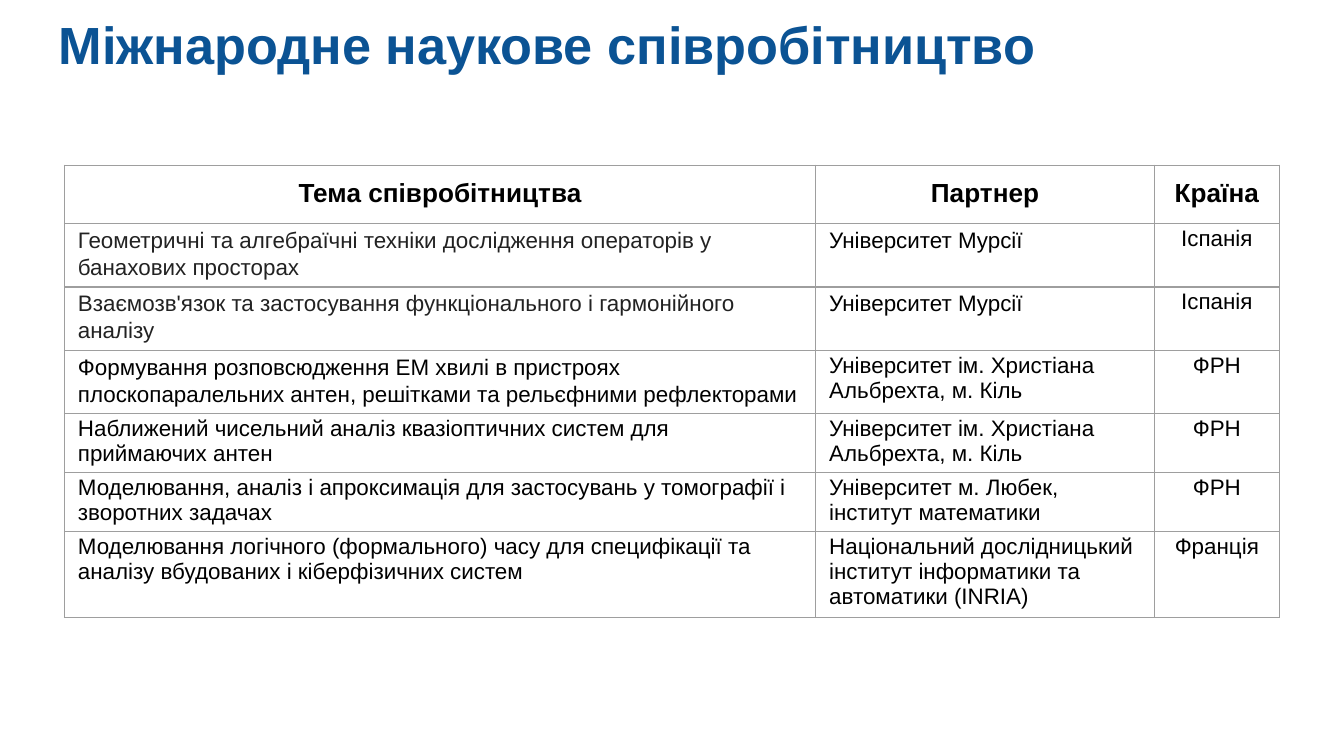
from lxml import etree
from pptx import Presentation
from pptx.dml.color import RGBColor
from pptx.enum.text import MSO_ANCHOR, PP_ALIGN
from pptx.oxml.ns import qn
from pptx.util import Inches, Pt

CENTER, LEFT = PP_ALIGN.CENTER, PP_ALIGN.LEFT
TOP = MSO_ANCHOR.TOP
WIDTH = Inches(10)
HEIGHT = WIDTH * 9 // 16
FONT = "Arial"
COLORS = {
    "title": "0B5394",
    "text": "000000",
    "soft": "222222",
    "border": "9E9E9E",
}
BORDER_WIDTH = Pt(0.75)
COLUMN_WIDTHS = [5.59, 2.52, 0.93]
ROW_HEIGHT = Pt(30)
HEADERS = ["Тема співробітництва", "Партнер", "Країна"]
PROJECTS = [
    ("Геометричні та алгебраїчні техніки дослідження операторів у банахових просторах",
     "Університет Мурсії", "Іспанія"),
    ("Взаємозв'язок та застосування функціонального і гармонійного аналізу",
     "Університет Мурсії", "Іспанія"),
    ("Формування розповсюдження ЕМ хвилі в пристроях плоскопаралельних антен, "
     "решітками та рельєфними рефлекторами",
     "Університет ім. Христіана Альбрехта, м. Кіль", "ФРН"),
    ("Наближений чисельний аналіз квазіоптичних систем для приймаючих антен",
     "Університет ім. Христіана Альбрехта, м. Кіль", "ФРН"),
    ("Моделювання, аналіз і апроксимація для застосувань у томографії і зворотних задачах",
     "Університет м. Любек, інститут математики", "ФРН"),
    ("Моделювання логічного (формального) часу для специфікації та аналізу "
     "вбудованих і кіберфізичних систем",
     "Національний дослідницький інститут інформатики та автоматики (INRIA)", "Франція"),
]
LOOSE = {"line_spacing": 1.08, "space_after": Pt(6)}
LOOSE_CELLS = {(1, 0), (1, 1), (2, 0), (2, 1), (3, 0)}
SOFT_CELLS = {(1, 0), (2, 0)}


def apply_format(target, values):
    for name, value in values.items():
        setattr(target, name, value)


def write_text(frame, text, font_format, color, para_format):
    para = frame.paragraphs[0]
    apply_format(para, para_format)
    span = para.add_run()
    span.text = text
    apply_format(span.font, {"name": FONT, **font_format})
    span.font.color.rgb = RGBColor.from_string(COLORS[color])


def set_borders(cell):
    properties = cell._tc.get_or_add_tcPr()
    for index, side in enumerate(("a:lnL", "a:lnR", "a:lnT", "a:lnB")):
        line = etree.Element(qn(side), w=str(BORDER_WIDTH))
        fill = etree.SubElement(line, qn("a:solidFill"))
        etree.SubElement(fill, qn("a:srgbClr"), val=COLORS["border"])
        properties.insert(index, line)


def add_title(page, box):
    frame = page.shapes.add_textbox(*box).text_frame
    margins = dict.fromkeys(
        ("margin_left", "margin_right", "margin_top", "margin_bottom"), Inches(0.1))
    apply_format(frame, {"word_wrap": True, "vertical_anchor": TOP, **margins})
    write_text(frame, "Міжнародне наукове співробітництво",
               {"size": Pt(28), "bold": True}, "title", {"alignment": LEFT})


def fill_cell(cell, row, column, text):
    is_header = row == 0
    padding = Inches(0.1 if is_header else 0.02)
    apply_format(cell, {
        "margin_left": Inches(0.1), "margin_right": Inches(0.1),
        "margin_top": padding, "margin_bottom": padding, "vertical_anchor": TOP,
    })
    cell.fill.background()
    set_borders(cell)
    centered = is_header or column == len(HEADERS) - 1
    para_format = {"alignment": CENTER if centered else LEFT}
    if (row, column) in LOOSE_CELLS:
        para_format.update(LOOSE)
    color = "soft" if (row, column) in SOFT_CELLS else "text"
    font_format = {"size": Pt(14 if is_header else 12), "bold": is_header}
    write_text(cell.text_frame, text, font_format, color, para_format)


def add_partner_table(page, box):
    rows = [HEADERS, *PROJECTS]
    holder = page.shapes.add_table(len(rows), len(HEADERS), *box)
    table = holder.table
    apply_format(table, {"first_row": False, "horz_banding": False})
    for column, width in zip(table.columns, COLUMN_WIDTHS):
        column.width = Inches(width)
    for row, texts in enumerate(rows):
        table.rows[row].height = ROW_HEIGHT
        for column, text in enumerate(texts):
            fill_cell(table.cell(row, column), row, column, text)
    apply_format(holder, {"width": box[2], "height": box[3]})


def main():
    deck = Presentation()
    apply_format(deck, {"slide_width": WIDTH, "slide_height": HEIGHT})
    page = deck.slides.add_slide(deck.slide_layouts[6])
    add_title(page, (Inches(0.34), Inches(-0.01), Inches(9.32), Inches(0.63)))
    add_partner_table(page, (Inches(0.48), Inches(1.23), Inches(3.28), Inches(3.28)))
    deck.save("out.pptx")


if __name__ == "__main__":
    main()
